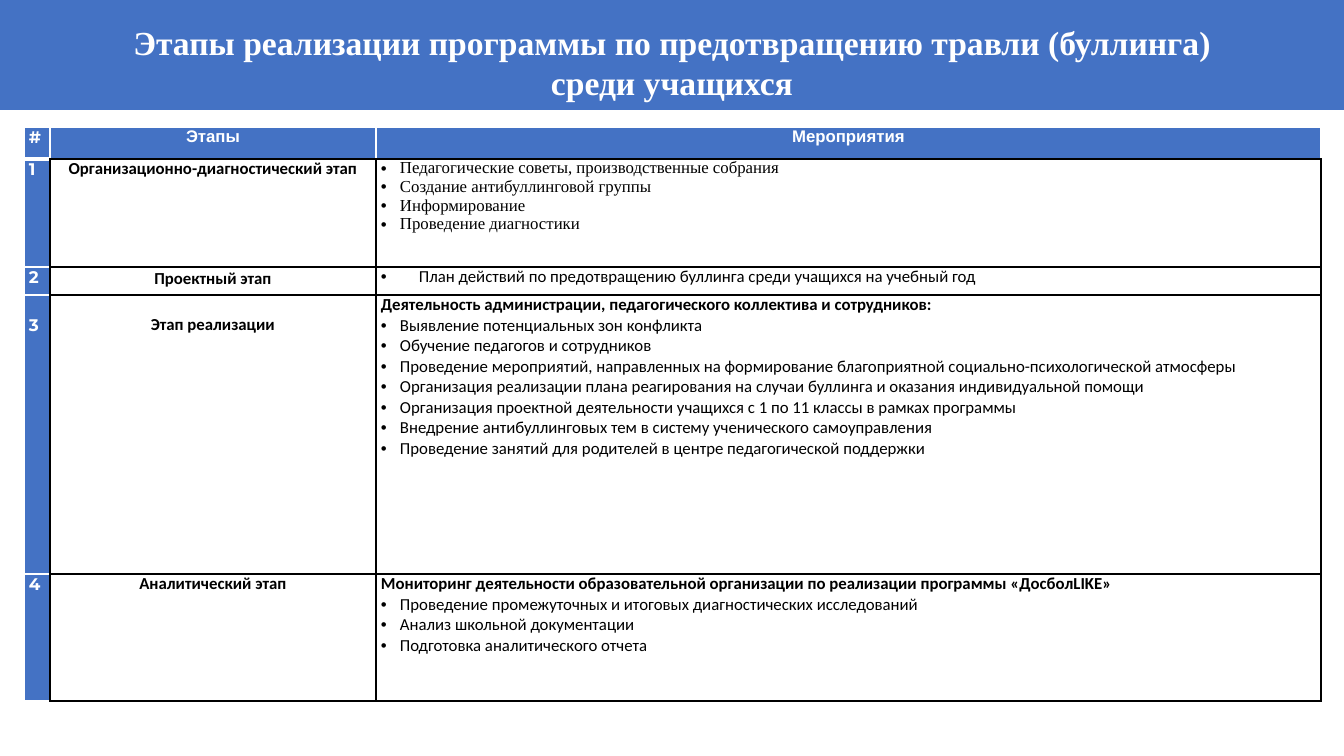
from lxml import etree
from pptx import Presentation
from pptx.dml.color import RGBColor
from pptx.enum import shapes, text
from pptx.oxml.ns import qn
from pptx.util import Pt

PX = 914400 / 100.8
BLUE, WHITE, BLACK = "4472C4", "FFFFFF", "000000"
SERIF, SANS, BODY, NUM = "Times New Roman", "Arial", "Calibri", "Montserrat"
LEFT, MID, FULL = text.PP_ALIGN.LEFT, text.PP_ALIGN.CENTER, text.PP_ALIGN.JUSTIFY

TITLE = "Этапы реализации программы по предотвращению травли (буллинга) среди учащихся"
HEADS = [("#", NUM, FULL), ("Этапы", SANS, MID), ("Мероприятия", SANS, MID)]
STAGES = [
    dict(name="Организационно-диагностический этап", height=108, font=SERIF, items=[
        "Педагогические советы, производственные собрания",
        "Создание антибуллинговой группы",
        "Информирование",
        "Проведение диагностики"]),
    dict(name="Проектный этап", height=28, indent=38, spacing=1.07, items=[
        "План действий по предотвращению буллинга среди учащихся на учебный год"]),
    dict(name="Этап реализации", height=279, top=20,
         lead="Деятельность администрации, педагогического коллектива и сотрудников:", items=[
             "Выявление потенциальных зон конфликта",
             "Обучение педагогов и сотрудников",
             "Проведение мероприятий, направленных на формирование благоприятной социально-психологической атмосферы",
             "Организация реализации плана реагирования на случаи буллинга и оказания индивидуальной помощи",
             "Организация проектной деятельности учащихся с 1 по 11 классы в рамках программы",
             "Внедрение антибуллинговых тем в систему ученического самоуправления",
             "Проведение занятий для родителей в центре педагогической поддержки"]),
    dict(name="Аналитический этап", height=127,
         lead="Мониторинг деятельности образовательной организации по реализации программы «ДосболLIKE»", items=[
             "Проведение промежуточных и итоговых диагностических исследований",
             "Анализ школьной документации",
             "Подготовка аналитического отчета"]),
]
COLS = [26, 326, 945]
HEAD = 32


def px(n):
    return round(n * PX)


def color(code):
    return RGBColor.from_string(code)


def style(par, face, ink, size=12, bold=True, align=LEFT):
    par.alignment = align
    font = par.font
    font.name, font.size, font.bold = face, Pt(size), bold
    font.color.rgb = color(ink)


def bullet(par, indent):
    props = par._p.get_or_add_pPr()
    props.set("marL", str(px(indent)))
    props.set("indent", str(-px(indent)))
    etree.SubElement(props, qn("a:buFont")).set("typeface", "Arial")
    etree.SubElement(props, qn("a:buChar")).set("char", "•")


def dress(cell, fill, edges, top=0):
    """Set margins, fill and borders; edges lists (colour, points) for left, right, top, bottom."""
    cell.margin_left = cell.margin_right = px(5)
    cell.margin_top, cell.margin_bottom = px(top), 0
    props = cell._tc.get_or_add_tcPr()
    for side, (ink, width) in zip("LRTB", edges):
        line = etree.SubElement(props, qn("a:ln" + side), w=str(Pt(width)))
        solid = etree.SubElement(line, qn("a:solidFill"))
        etree.SubElement(solid, qn("a:srgbClr"), val=ink)
    cell.fill.solid()
    cell.fill.fore_color.rgb = color(fill)


def write(cell, words, *args, **kw):
    par = cell.text_frame.paragraphs[0]
    par.text = words
    style(par, *args, **kw)
    return par


def fill_list(cell, stage):
    frame = cell.text_frame
    lead = stage.get("lead")
    if lead:
        write(cell, lead, BODY, BLACK)
    for i, item in enumerate(stage["items"]):
        par = frame.add_paragraph() if lead or i else frame.paragraphs[0]
        par.text = item
        bullet(par, stage.get("indent", 19))
        style(par, stage.get("font", BODY), BLACK, bold=False)


deck = Presentation()
deck.slide_width, deck.slide_height = px(1344), px(756)
slide = deck.slides.add_slide(deck.slide_layouts[6])

band = slide.shapes.add_shape(shapes.MSO_SHAPE.RECTANGLE, 0, px(-5), px(1344), px(115))
band.shadow.inherit = False
band.fill.solid()
band.fill.fore_color.rgb = color(BLUE)
band.line.fill.background()

title = slide.shapes.add_textbox(px(98), px(17), px(1148), px(92))
title.text_frame.word_wrap = True
write(title, TITLE, SERIF, WHITE, size=24, align=MID)

rows = [HEAD] + [stage["height"] for stage in STAGES]
grid = slide.shapes.add_table(len(rows), len(COLS), px(24), px(127),
                              px(sum(COLS)), px(sum(rows))).table
grid.first_row = grid.horz_banding = False
for col, width in zip(grid.columns, COLS):
    col.width = px(width)
for row, height in zip(grid.rows, rows):
    row.height = px(height)

thin, dark = (WHITE, 1), (BLACK, 1)
for c, (words, face, align) in enumerate(HEADS):
    cell = grid.cell(0, c)
    dress(cell, BLUE, [thin, thin, thin, dark if c else (WHITE, 3)])
    write(cell, words, face, WHITE, align=align)

for r, stage in enumerate(STAGES, 1):
    num, name, tasks = (grid.cell(r, c) for c in range(3))
    top = stage.get("top", 0)
    above = (WHITE, 3) if r == 1 else thin
    dress(num, BLUE, [thin, dark, above, thin], top)
    dress(name, WHITE, [dark] * 4, top)
    dress(tasks, WHITE, [dark] * 4)
    write(num, str(r), NUM, WHITE, align=FULL)
    par = write(name, stage["name"], BODY, BLACK, align=MID)
    par.line_spacing = stage.get("spacing")
    fill_list(tasks, stage)

deck.save("out.pptx")
